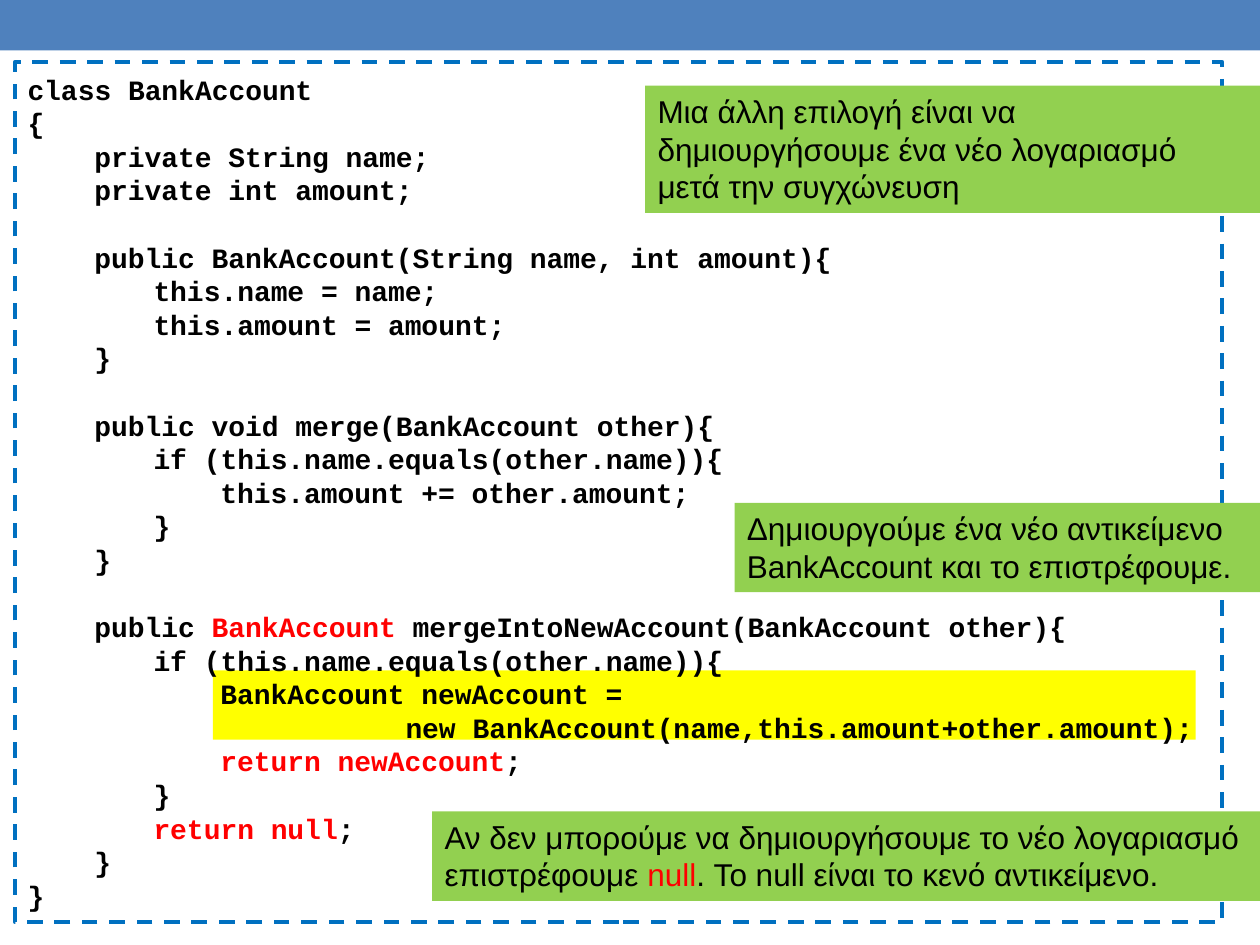
import dataclasses
import typing

import pptx
import pptx.dml.color
import pptx.enum.dml
import pptx.enum.shapes
import pptx.enum.text
import pptx.util

Inches = pptx.util.Inches
Pt = pptx.util.Pt

COLORS = {
    "bar": "4F81BD",
    "frame": "0070C0",
    "highlight": "FFFF00",
    "note": "92D050",
    "text": "000000",
    "accent": "FF0000",
}
LINE_HEIGHT = 1.2
TAB = 1.0
STEP = 0.53


class Run(typing.NamedTuple):
    text: str
    color: str = "text"


@dataclasses.dataclass
class Line:
    indent: float
    runs: list[Run]
    gap: bool = False


@dataclasses.dataclass
class Box:
    left: float
    top: float
    width: float
    height: float
    fill: str | None = None


@dataclasses.dataclass
class Note:
    box: Box
    runs: list[Run]


def line(indent: float, *parts: str | Run, gap: bool = False) -> Line:
    return Line(indent, [p if isinstance(p, Run) else Run(p) for p in parts], gap)


BAR = Box(0, 0, 10, 0.4, "bar")
HIGHLIGHT = Box(1.69, 5.32, 7.8, 0.55, "highlight")
FRAME = Box(0.12, 0.49, 9.58, 6.83)

CODE = [
    line(0, "class BankAccount"),
    line(0, "{"),
    line(STEP, "private String name;"),
    line(STEP, "private int amount;"),
    line(STEP, "public BankAccount(String name, int amount){", gap=True),
    line(TAB, "this.name = name;"),
    line(TAB, "this.amount = amount;"),
    line(STEP, "}"),
    line(STEP, "public void merge(BankAccount other){", gap=True),
    line(TAB, "if (this.name.equals(other.name)){"),
    line(TAB + STEP, "this.amount += other.amount;"),
    line(TAB, "}"),
    line(STEP, "}"),
    line(STEP, "public ", Run("BankAccount ", "accent"),
         "mergeIntoNewAccount(BankAccount other){", gap=True),
    line(TAB, "if (this.name.equals(other.name)){"),
    line(TAB + STEP, "BankAccount newAccount ="),
    line(3 * TAB, "new BankAccount(name,this.amount+other.amount);"),
    line(TAB + STEP, Run("return newAccount", "accent"), ";"),
    line(TAB, "}"),
    line(TAB, Run("return null", "accent"), ";"),
    line(STEP, "}"),
    line(0, "}"),
]

NOTES = [
    Note(Box(5.12, 0.68, 4.88, 1.01, "note"),
         [Run("Μια άλλη επιλογή είναι να δημιουργήσουμε ένα νέο λογαριασμό "
              "μετά την συγχώνευση")]),
    Note(Box(5.83, 3.99, 4.17, 0.71, "note"),
         [Run("Δημιουργούμε ένα νέο αντικείμενο BankAccount και το επιστρέφουμε.")]),
    Note(Box(3.43, 6.44, 6.57, 0.71, "note"),
         [Run("Αν δεν μπορούμε να δημιουργήσουμε το νέο λογαριασμό επιστρέφουμε "),
          Run("null", "accent"),
          Run(". Το null είναι το κενό αντικείμενο.")]),
]


def rgb(name: str) -> pptx.dml.color.RGBColor:
    return pptx.dml.color.RGBColor.from_string(COLORS[name])


def add_box(s, box: Box):
    sp = s.shapes.add_shape(
        pptx.enum.shapes.MSO_SHAPE.RECTANGLE,
        Inches(box.left), Inches(box.top), Inches(box.width), Inches(box.height))
    sp.shadow.inherit = False
    sp.line.fill.background()
    if box.fill:
        sp.fill.solid()
        sp.fill.fore_color.rgb = rgb(box.fill)
    else:
        sp.fill.background()
    return sp


def write_runs(p, runs: list[Run], font: str, size: int, bold: bool) -> None:
    p.alignment = pptx.enum.text.PP_ALIGN.LEFT
    p.line_spacing = Pt(size * LINE_HEIGHT)
    for run in runs:
        r = p.add_run()
        r.text = run.text
        r.font.name = font
        r.font.size = Pt(size)
        r.font.bold = bold
        r.font.color.rgb = rgb(run.color)


def add_code(s, box: Box, lines: list[Line], size: int = 16) -> None:
    sp = add_box(s, box)
    sp.line.color.rgb = rgb("frame")
    sp.line.width = Pt(2.25)
    sp.line.dash_style = pptx.enum.dml.MSO_LINE.DASH
    tf = sp.text_frame
    tf.word_wrap = False
    tf.vertical_anchor = pptx.enum.text.MSO_ANCHOR.MIDDLE
    for i, item in enumerate(lines):
        p = tf.add_paragraph() if i else tf.paragraphs[0]
        write_runs(p, item.runs, "Courier New", size, True)
        pPr = p._p.get_or_add_pPr()
        pPr.set("marL", str(Inches(item.indent)))
        pPr.set("indent", "0")
        if item.gap:
            p.space_before = Pt(size * LINE_HEIGHT)


def add_note(s, note: Note) -> None:
    tf = add_box(s, note.box).text_frame
    tf.word_wrap = True
    tf.vertical_anchor = pptx.enum.text.MSO_ANCHOR.TOP
    write_runs(tf.paragraphs[0], note.runs, "Arial", 18, False)


def main() -> None:
    prs = pptx.Presentation()
    prs.slide_width = Inches(10)
    prs.slide_height = Inches(7.5)
    s = prs.slides.add_slide(prs.slide_layouts[6])
    add_box(s, BAR)
    add_box(s, HIGHLIGHT)
    add_code(s, FRAME, CODE)
    for note in NOTES:
        add_note(s, note)
    prs.save("out.pptx")


if __name__ == "__main__":
    main()
